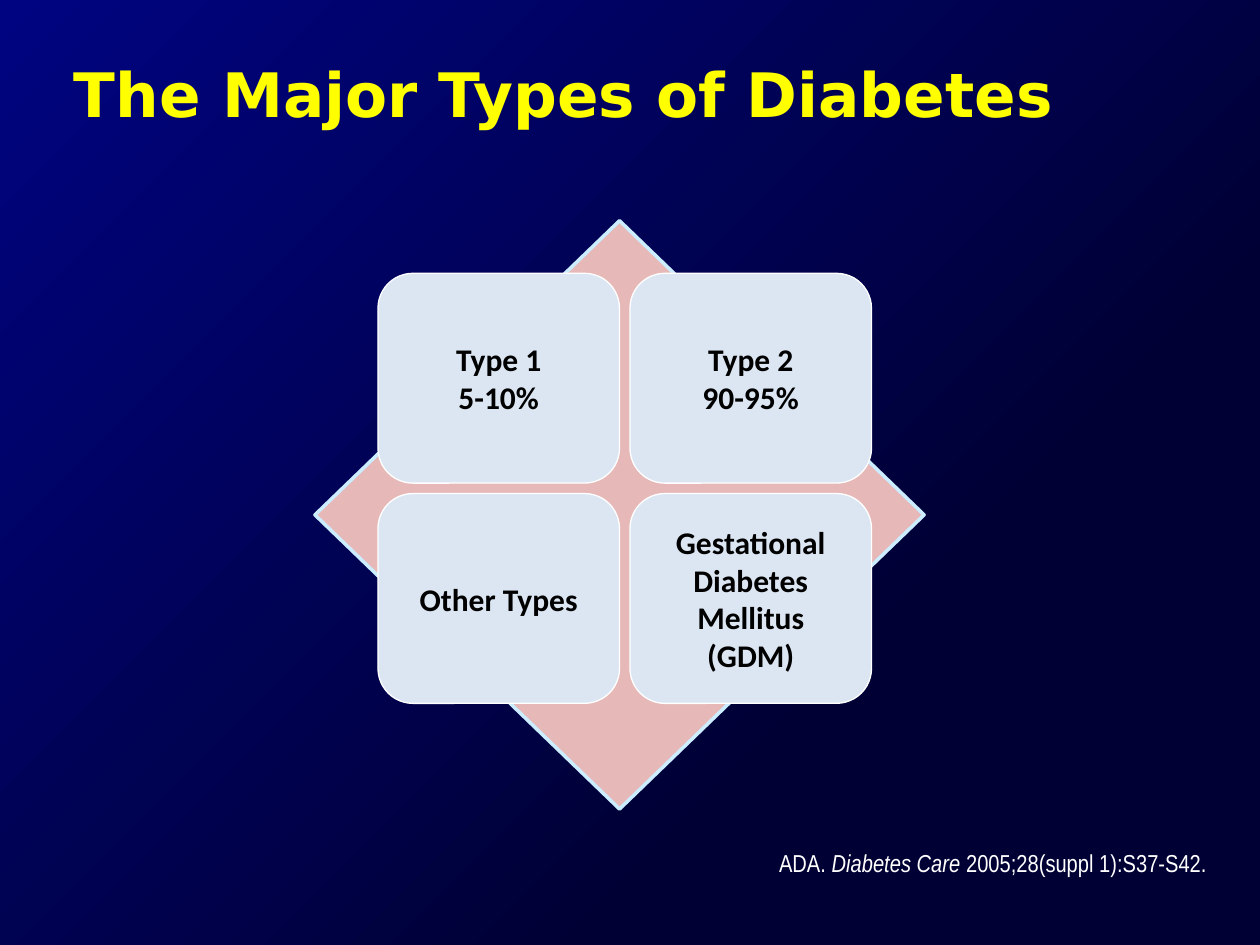
from dataclasses import dataclass

from pptx import Presentation
from pptx.dml.color import RGBColor as Rgb
from pptx.enum.shapes import MSO_SHAPE as Shape
from pptx.enum.text import MSO_ANCHOR as Anchor, PP_ALIGN as Align
from pptx.util import Cm, Pt


@dataclass(frozen=True)
class Theme:
    night: Rgb = Rgb.from_string("000035")
    navy: Rgb = Rgb.from_string("000480")
    yellow: Rgb = Rgb.from_string("FFFF00")
    white: Rgb = Rgb.from_string("FFFFFF")
    black: Rgb = Rgb.from_string("000000")
    rose: Rgb = Rgb.from_string("E6B9B8")
    ice: Rgb = Rgb.from_string("CCECFF")
    mist: Rgb = Rgb.from_string("DCE6F2")
    title_size: Pt = Pt(35)
    card_size: Pt = Pt(18)
    citation_size: Pt = Pt(14)


THEME = Theme()
TYPES = [
    ["Type 1\n5-10%", "Type 2\n90-95%"],
    ["Other Types", "Gestational Diabetes Mellitus (GDM)"],
]
CITATION = [("ADA. ", False), ("Diabetes Care ", True), ("2005;28(suppl 1):S37-S42.", False)]


def style(font, name, size, color, bold=False, italic=False):
    font.name, font.size, font.bold, font.italic = name, size, bold, italic
    font.color.rgb = color


def add_filled(page, kind, box, fill, line, width):
    shape = page.shapes.add_shape(kind, *box)
    shape.shadow.inherit = False
    shape.fill.solid()
    shape.fill.fore_color.rgb = fill
    shape.line.color.rgb = line
    shape.line.width = Pt(width)
    return shape


def add_backdrop(page, box):
    """Diagonal fade from navy at the top left to a flat dark corner."""
    backdrop = page.shapes.add_shape(Shape.RECTANGLE, *box)
    backdrop.shadow.inherit = False
    backdrop.line.fill.background()
    backdrop.fill.gradient()
    backdrop.fill.gradient_angle = 315
    stops = backdrop.fill.gradient_stops
    for stop, position, color in zip(stops, (0, 0.7), (THEME.navy, THEME.night)):
        stop.position = position
        stop.color.rgb = color


def add_title(page, box, text):
    frame = page.shapes.add_textbox(*box).text_frame
    frame.word_wrap = True
    frame.text = text
    style(frame.paragraphs[0].runs[0].font, "DejaVu Sans", THEME.title_size, THEME.yellow, bold=True)


def add_card(page, box, text):
    card = add_filled(page, Shape.ROUNDED_RECTANGLE, box, THEME.mist, THEME.white, 0.75)
    frame = card.text_frame
    frame.word_wrap = True
    frame.vertical_anchor = Anchor.MIDDLE
    frame.text = text
    for para in frame.paragraphs:
        para.alignment = Align.CENTER
        style(para.runs[0].font, "Calibri", THEME.card_size, THEME.black, bold=True)


def add_type_matrix(page, box):
    """Diamond filling the box, with a grid of cards over it."""
    left, top, _, _ = box
    add_filled(page, Shape.FLOWCHART_DECISION, box, THEME.rose, THEME.ice, 2)
    card_width, card_height, gap = Cm(4.87), Cm(4.23), Cm(0.21)
    grid_left, grid_top = left + Cm(1.27), top + Cm(1.06)
    for row, labels in enumerate(TYPES):
        for column, label in enumerate(labels):
            card_left = grid_left + column * (card_width + gap)
            card_top = grid_top + row * (card_height + gap)
            add_card(page, (card_left, card_top, card_width, card_height), label)


def add_citation(page, box):
    frame = page.shapes.add_textbox(*box).text_frame
    frame.word_wrap = True
    para = frame.paragraphs[0]
    para.alignment = Align.RIGHT
    for text, italic in CITATION:
        span = para.add_run()
        span.text = text
        style(span.font, "Arial Narrow", THEME.citation_size, THEME.white, italic=italic)


def main():
    deck = Presentation()
    deck.slide_width, deck.slide_height = Cm(25.4), Cm(19.05)
    page = deck.slides.add_slide(deck.slide_layouts[6])
    add_backdrop(page, (0, 0, deck.slide_width, deck.slide_height))
    add_title(page, (Cm(1.24), Cm(1), Cm(22.75), Cm(3.18)), "The Major Types of Diabetes")
    add_type_matrix(page, (Cm(6.35), Cm(4.45), Cm(12.28), Cm(11.86)))
    add_citation(page, (Cm(11.68), Cm(16.97), Cm(12.9), Cm(1.27)))
    deck.save("out.pptx")


if __name__ == "__main__":
    main()
